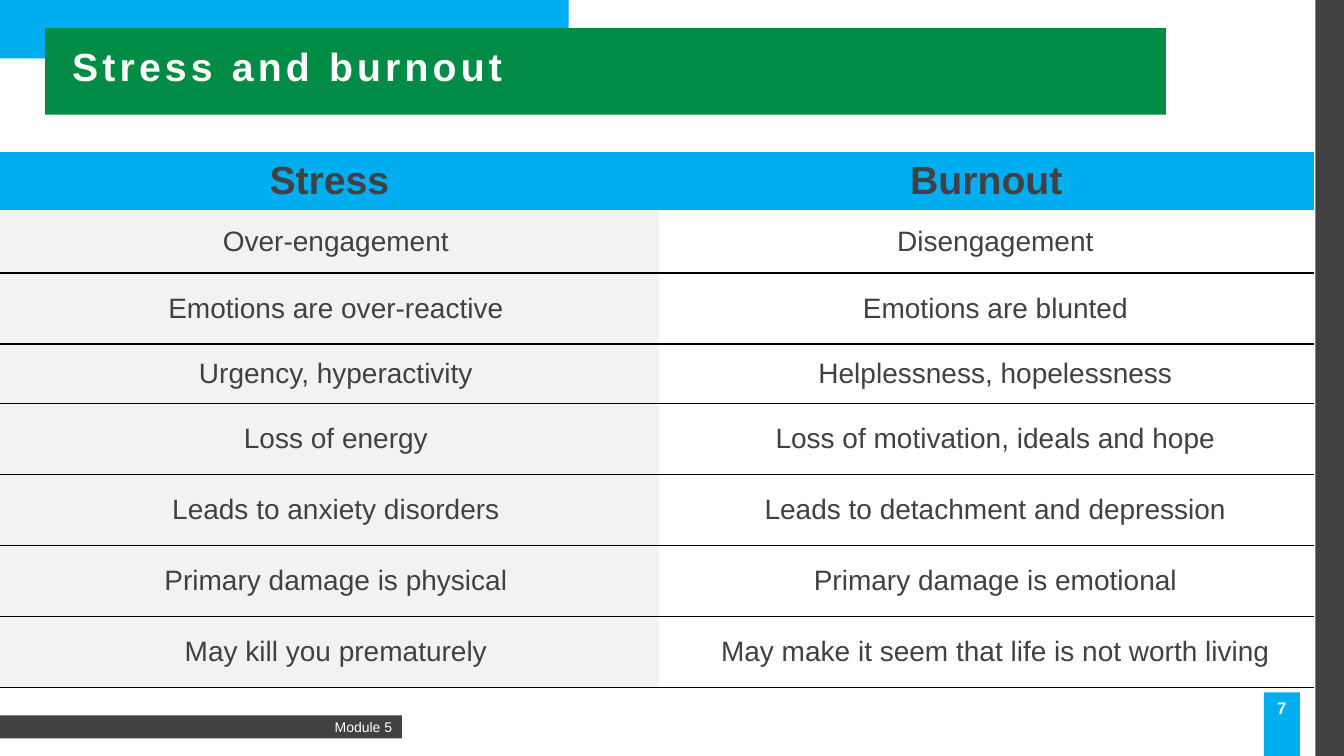
"""Build the slide that compares stress with burnout."""
import pptx
import pptx.util
import pptx.oxml
import pptx.oxml.ns
import pptx.dml.color
import pptx.enum.shapes
import pptx.enum.text

Cm = pptx.util.Cm
Pt = pptx.util.Pt
ALIGN = pptx.enum.text.PP_ALIGN
ANCHOR = pptx.enum.text.MSO_ANCHOR

HUES = {
    "blue": "00ADEF",
    "green": "008C44",
    "dark": "414042",
    "pale": "F2F2F2",
    "white": "FFFFFF",
    "black": "000000",
}
ROWS = [
    ("Stress", "Burnout"),
    ("Over-engagement", "Disengagement"),
    ("Emotions are over-reactive", "Emotions are blunted"),
    ("Urgency, hyperactivity", "Helplessness, hopelessness"),
    ("Loss of energy", "Loss of motivation, ideals and hope"),
    ("Leads to anxiety disorders", "Leads to detachment and depression"),
    ("Primary damage is physical", "Primary damage is emotional"),
    ("May kill you prematurely", "May make it seem that life is not worth living"),
]
WIDTHS = [16.6, 16.51]
HEIGHTS = [1.44, 1.6, 1.79, 1.49] + [1.79] * 4
INDENTS = [0.33, 0.46]
PLAIN = "{2D5ABB26-0587-4C30-8999-92F81FD0307C}"


def paint(fill, hue):
    """Give a fill one solid colour."""
    fill.solid()
    fill.fore_color.rgb = pptx.dml.color.RGBColor.from_string(HUES[hue])


def write(frame, text, size, hue, bold=False, align=ALIGN.LEFT):
    """Put one styled paragraph in a text frame and return it."""
    frame.text = text
    line = frame.paragraphs[0]
    line.alignment = align
    font = line.runs[0].font
    font.name = "Arial"
    font.size = Pt(size)
    font.bold = bold
    paint(font.fill, hue)
    return line


def add_bar(slide, left, top, width, height, hue):
    """Add a plain rectangle and return it."""
    kind = pptx.enum.shapes.MSO_SHAPE.RECTANGLE
    bar = slide.shapes.add_shape(kind, Cm(left), Cm(top), Cm(width), Cm(height))
    bar.shadow.inherit = False
    paint(bar.fill, hue)
    bar.line.fill.background()
    return bar


def add_title(slide, text):
    """Add the spaced title on the green band."""
    box = slide.shapes.add_textbox(Cm(1.57), Cm(0.97), Cm(23.04), Cm(1.52))
    frame = box.text_frame
    frame.word_wrap = True
    frame.vertical_anchor = ANCHOR.MIDDLE
    line = write(frame, text, 28, "white", True)
    line.line_spacing = 0.9
    line.runs[0].font._element.set("spc", "300")


def add_rule(cell):
    """Draw a thin black line under a cell."""
    rule = pptx.oxml.parse_xml(
        f'<a:lnB {pptx.oxml.ns.nsdecls("a")} w="12700"><a:solidFill>'
        f'<a:srgbClr val="{HUES["black"]}"/></a:solidFill></a:lnB>'
    )
    cell._tc.get_or_add_tcPr().insert(0, rule)


def fill_cell(cell, text, row, col):
    """Style one table cell by its place in the grid."""
    head = row == 0
    cell.margin_left = cell.margin_right = 0
    cell.margin_top = cell.margin_bottom = 0
    cell.vertical_anchor = ANCHOR.MIDDLE
    paint(cell.fill, "blue" if head else ("pale", "white")[col])
    size = 28 if head else 20
    line = write(cell.text_frame, text, size, "dark", head, ALIGN.CENTER)
    if not head:
        line._p.get_or_add_pPr().set("marL", str(Cm(INDENTS[col])))
        add_rule(cell)


def add_grid(slide):
    """Add the table of contrasts."""
    frame = slide.shapes.add_table(
        len(ROWS), len(WIDTHS), 0, Cm(3.84), Cm(sum(WIDTHS)), Cm(sum(HEIGHTS))
    )
    table = frame.table
    table.first_row = table.horz_banding = False
    table._tbl.tblPr[0].text = PLAIN
    for col, width in enumerate(WIDTHS):
        table.columns[col].width = Cm(width)
    for row, texts in enumerate(ROWS):
        table.rows[row].height = Cm(HEIGHTS[row])
        for col, text in enumerate(texts):
            fill_cell(table.cell(row, col), text, row, col)


def add_foot(slide):
    """Add the module label and the page number."""
    label = add_bar(slide, 0, 18.03, 10.13, 0.58, "dark").text_frame
    label.vertical_anchor = ANCHOR.MIDDLE
    write(label, "Module 5", 10, "white", align=ALIGN.RIGHT)
    page = add_bar(slide, 31.85, 17.45, 0.91, 1.6, "blue").text_frame
    page.margin_left = page.margin_right = Cm(0.1)
    page.vertical_anchor = ANCHOR.TOP
    write(page, "7", 12, "white", True, ALIGN.CENTER)


def main():
    """Build and save the slide."""
    deck = pptx.Presentation()
    deck.slide_width = Cm(33.87)
    deck.slide_height = Cm(19.05)
    slide = deck.slides.add_slide(deck.slide_layouts[6])
    add_bar(slide, 0, 0, 14.33, 1.47, "blue")
    add_bar(slide, 1.14, 0.71, 28.24, 2.18, "green")
    add_bar(slide, 33.15, 0, 0.72, 19.05, "dark")
    add_foot(slide)
    add_title(slide, "Stress and burnout")
    add_grid(slide)
    deck.save("out.pptx")


if __name__ == "__main__":
    main()
